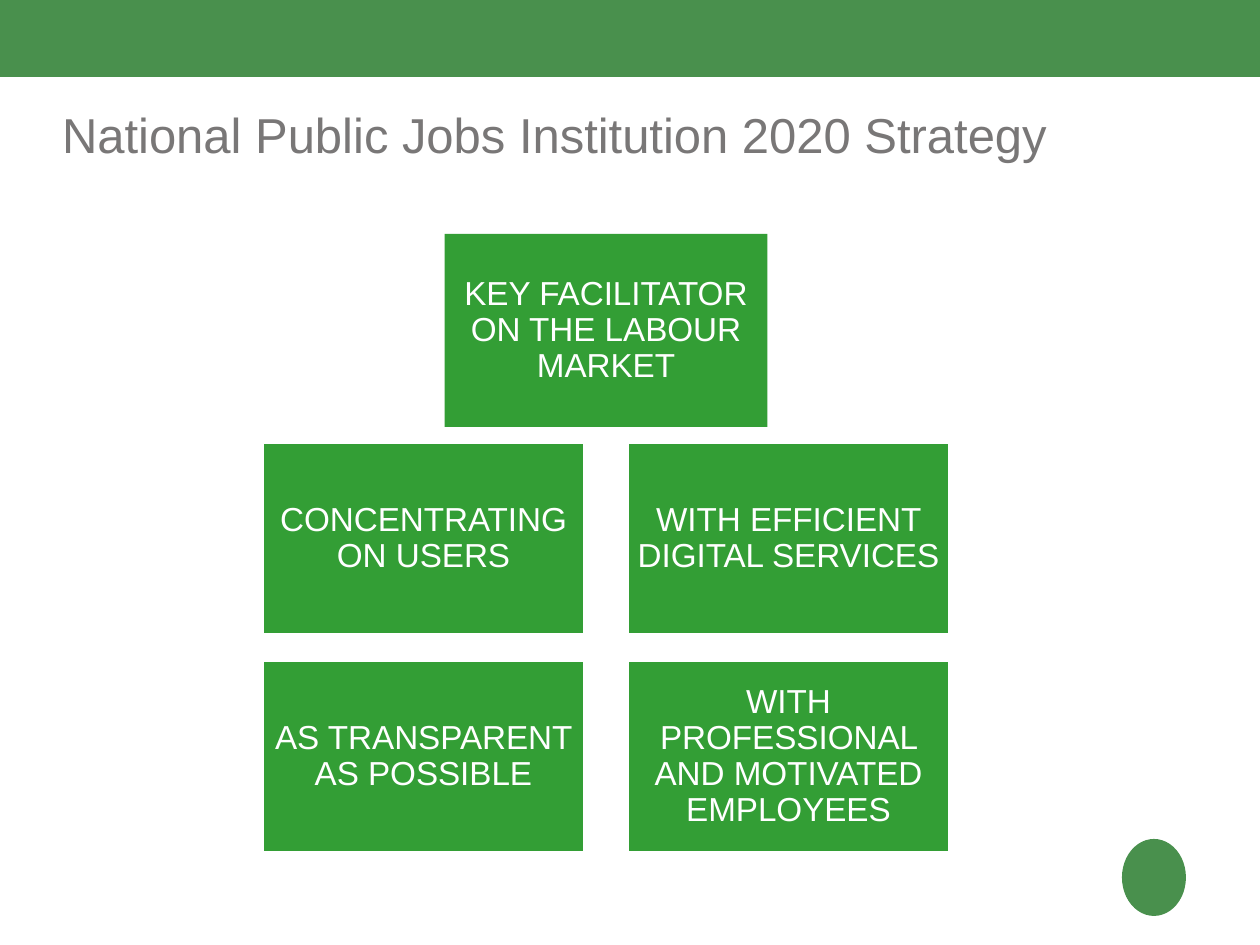
from pptx import Presentation
from pptx.dml.color import RGBColor
from pptx.enum.shapes import MSO_SHAPE as Shape
from pptx.enum.text import MSO_ANCHOR as Anchor, PP_ALIGN as Align
from pptx.util import Pt

PX = 914400 / 126
BAND, TILE, WHITE, GREY = "49904D", "339E35", "FFFFFF", "797777"

TITLE = "National Public Jobs Institution 2020 Strategy"
GOAL = "KEY FACILITATOR ON THE LABOUR MARKET"
PILLARS = [
    ["CONCENTRATING ON USERS", "WITH EFFICIENT DIGITAL SERVICES"],
    ["AS TRANSPARENT AS POSSIBLE", "WITH PROFESSIONAL AND MOTIVATED EMPLOYEES"],
]

TILE_W, TILE_H = 323, 193
LEFT, TOP, COLUMN_STEP, ROW_STEP = 262, 442, 365, 218
GOAL_TOP = 234


def px(length):
    """Turn px into EMU."""
    return round(length * PX)


def color(code):
    """Turn a hex string into a colour."""
    return RGBColor.from_string(code)


def write(shape, text, size, ink, align=Align.LEFT, anchor=Anchor.TOP, inset=0, spacing=1.0):
    """Put formatted text into a shape."""
    frame = shape.text_frame
    frame.word_wrap = True
    frame.vertical_anchor = anchor
    frame.margin_left = frame.margin_right = px(inset)
    frame.margin_top = frame.margin_bottom = px(inset)
    frame.text = text
    paragraph = frame.paragraphs[0]
    paragraph.alignment = align
    paragraph.line_spacing = spacing
    font = paragraph.runs[0].font
    font.name, font.size = "Arial", Pt(size)
    font.color.rgb = color(ink)


def block(slide, left, top, width, height, fill, outline=None, kind=Shape.RECTANGLE):
    """Add a flat filled shape."""
    shape = slide.shapes.add_shape(kind, px(left), px(top), px(width), px(height))
    shape.shadow.inherit = False
    shape.fill.solid()
    shape.fill.fore_color.rgb = color(fill)
    if outline:
        shape.line.color.rgb = color(outline)
        shape.line.width = Pt(2)
    else:
        shape.line.fill.background()
    return shape


def tile(slide, text, left, top, outline=None):
    """Add one strategy tile."""
    box = block(slide, left, top, TILE_W, TILE_H, TILE, outline)
    write(box, text, 19, WHITE, Align.CENTER, Anchor.MIDDLE, inset=9, spacing=0.9)


def main():
    """Build the strategy slide."""
    deck = Presentation()
    deck.slide_width, deck.slide_height = px(1260), px(945)
    slide = deck.slides.add_slide(deck.slide_layouts[5])

    block(slide, 0, -1, 1260, 78, BAND)
    block(slide, 1122, 839, 64, 77, BAND, kind=Shape.OVAL)

    title = slide.shapes.title
    title.left, title.top, title.width, title.height = map(px, (62, 104, 1167, 89))
    write(title, TITLE, 28, GREY)

    for row, pillars in enumerate(PILLARS):
        for column, pillar in enumerate(pillars):
            tile(slide, pillar, LEFT + column * COLUMN_STEP, TOP + row * ROW_STEP, WHITE)
    tile(slide, GOAL, LEFT + COLUMN_STEP / 2, GOAL_TOP)

    deck.save("out.pptx")


if __name__ == "__main__":
    main()
